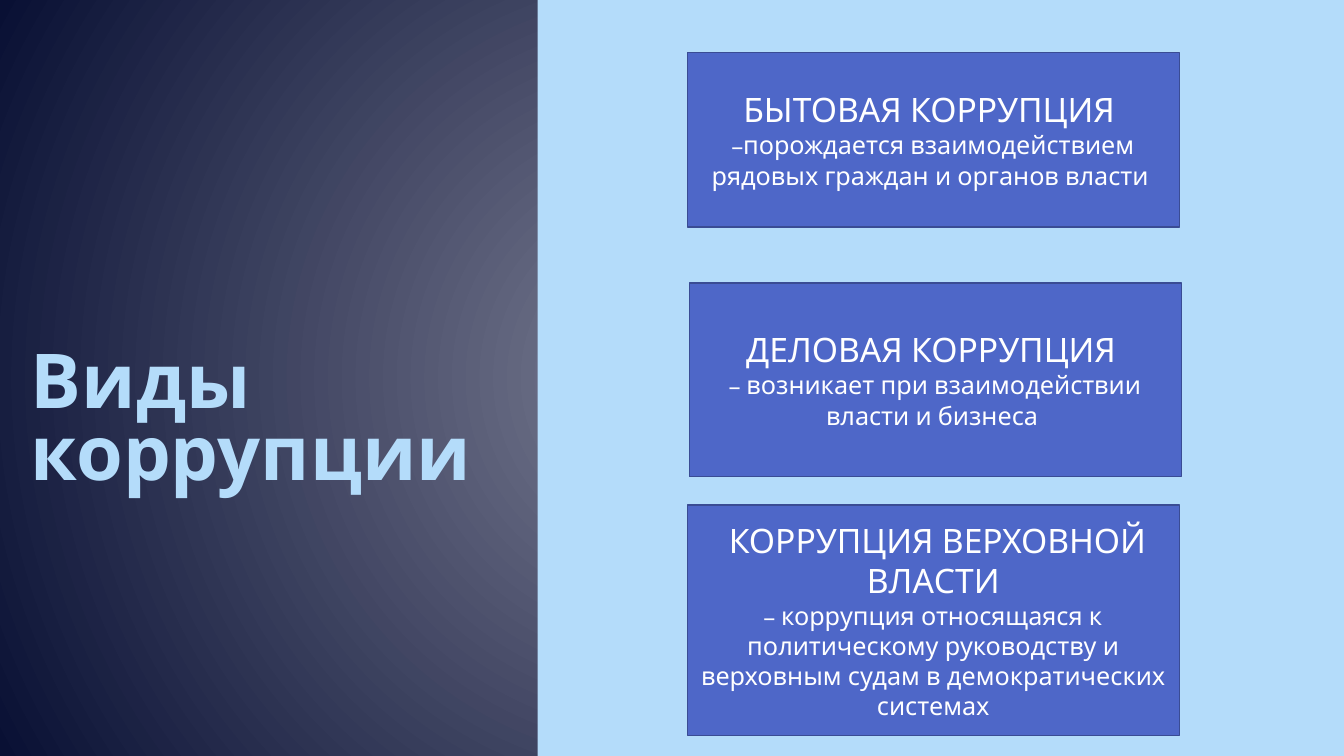
from dataclasses import dataclass

from lxml import etree
from pptx import Presentation
from pptx import util as u
from pptx.dml.color import RGBColor
from pptx.enum import shapes, text
from pptx.oxml import ns

FONT = "League Spartan"
SKY = RGBColor(0xB4, 0xDC, 0xFA)
BLUE = RGBColor(0x4E, 0x67, 0xC8)
BLUE_EDGE = RGBColor(0x3A, 0x4C, 0x94)
WHITE = RGBColor(0xFF, 0xFF, 0xFF)
GLOW = RGBColor(0x78, 0x7B, 0x91)
NIGHT = RGBColor(0x09, 0x10, 0x34)

SLIDE_WIDTH, SLIDE_HEIGHT = u.Cm(33.87), u.Cm(19.05)
PANEL_LEFT = u.Cm(13.55)
CARD_WIDTH = u.Cm(12.4)

TITLE_FORMAT = {"name": FONT, "size": u.Pt(54), "bold": True}
HEADING_FORMAT = {"name": FONT, "size": u.Pt(24)}
DETAIL_FORMAT = {"name": FONT, "size": u.Pt(18)}


@dataclass(frozen=True)
class Card:
    left: float
    top: float
    height: float
    heading: str
    detail: str


CARDS = [
    Card(17.32, 1.32, 4.4, "БЫТОВАЯ КОРРУПЦИЯ ",
         "–порождается взаимодействием рядовых граждан и органов власти "),
    Card(17.37, 7.13, 4.88, "ДЕЛОВАЯ КОРРУПЦИЯ ",
         "– возникает при взаимодействии власти и бизнеса "),
    Card(17.32, 12.73, 5.8, " КОРРУПЦИЯ ВЕРХОВНОЙ ВЛАСТИ",
         "– коррупция относящаяся к политическому руководству "
         "и верховным судам в демократических системах"),
]


def write(paragraph, wording: str, font_format: dict, color: RGBColor) -> None:
    run = paragraph.add_run()
    run.text = wording
    for attribute, value in font_format.items():
        setattr(run.font, attribute, value)
    run.font.color.rgb = color


def paint_background(slide) -> None:
    """Fill the slide with a circular gradient, light in the centre."""
    fill = slide.background.fill
    fill.gradient()
    for stop, color in zip(fill.gradient_stops, (GLOW, NIGHT)):
        stop.color.rgb = color
    gradient = slide.element.xpath(".//p:bg//a:gradFill")[0]
    for linear in gradient.findall(ns.qn("a:lin")):
        gradient.remove(linear)
    circle = etree.SubElement(gradient, ns.qn("a:path"), {"path": "circle"})
    etree.SubElement(circle, ns.qn("a:fillToRect"),
                     {side: "50000" for side in "ltrb"})


def add_panel(slide) -> None:
    panel = slide.shapes.add_shape(
        shapes.MSO_SHAPE.RECTANGLE, PANEL_LEFT, 0,
        SLIDE_WIDTH - PANEL_LEFT, SLIDE_HEIGHT)
    panel.shadow.inherit = False
    panel.fill.solid()
    panel.fill.fore_color.rgb = SKY
    panel.line.fill.background()


def add_title(slide) -> None:
    title = slide.shapes.add_textbox(
        u.Cm(0.53), u.Cm(1.32), u.Cm(12.01), u.Cm(15.27))
    frame = title.text_frame
    frame.word_wrap = True
    frame.vertical_anchor = text.MSO_ANCHOR.BOTTOM
    frame.margin_bottom = u.Cm(4.11)
    paragraph = frame.paragraphs[0]
    paragraph.line_spacing = 0.8
    write(paragraph, "Виды коррупции", TITLE_FORMAT, SKY)


def add_card(slide, card: Card) -> None:
    shape = slide.shapes.add_shape(
        shapes.MSO_SHAPE.FLOWCHART_PROCESS, u.Cm(card.left), u.Cm(card.top),
        CARD_WIDTH, u.Cm(card.height))
    shape.shadow.inherit = False
    shape.fill.solid()
    shape.fill.fore_color.rgb = BLUE
    shape.line.color.rgb = BLUE_EDGE
    shape.line.width = u.Pt(1)
    frame = shape.text_frame
    frame.word_wrap = True
    frame.vertical_anchor = text.MSO_ANCHOR.MIDDLE
    heading, detail = frame.paragraphs[0], frame.add_paragraph()
    write(heading, card.heading, HEADING_FORMAT, WHITE)
    write(detail, card.detail, DETAIL_FORMAT, WHITE)
    for paragraph in (heading, detail):
        paragraph.alignment = text.PP_ALIGN.CENTER


def main() -> None:
    presentation = Presentation()
    presentation.slide_width = SLIDE_WIDTH
    presentation.slide_height = SLIDE_HEIGHT
    slide = presentation.slides.add_slide(presentation.slide_layouts[6])
    paint_background(slide)
    add_panel(slide)
    add_title(slide)
    for card in CARDS:
        add_card(slide, card)
    presentation.save("out.pptx")


if __name__ == "__main__":
    main()
